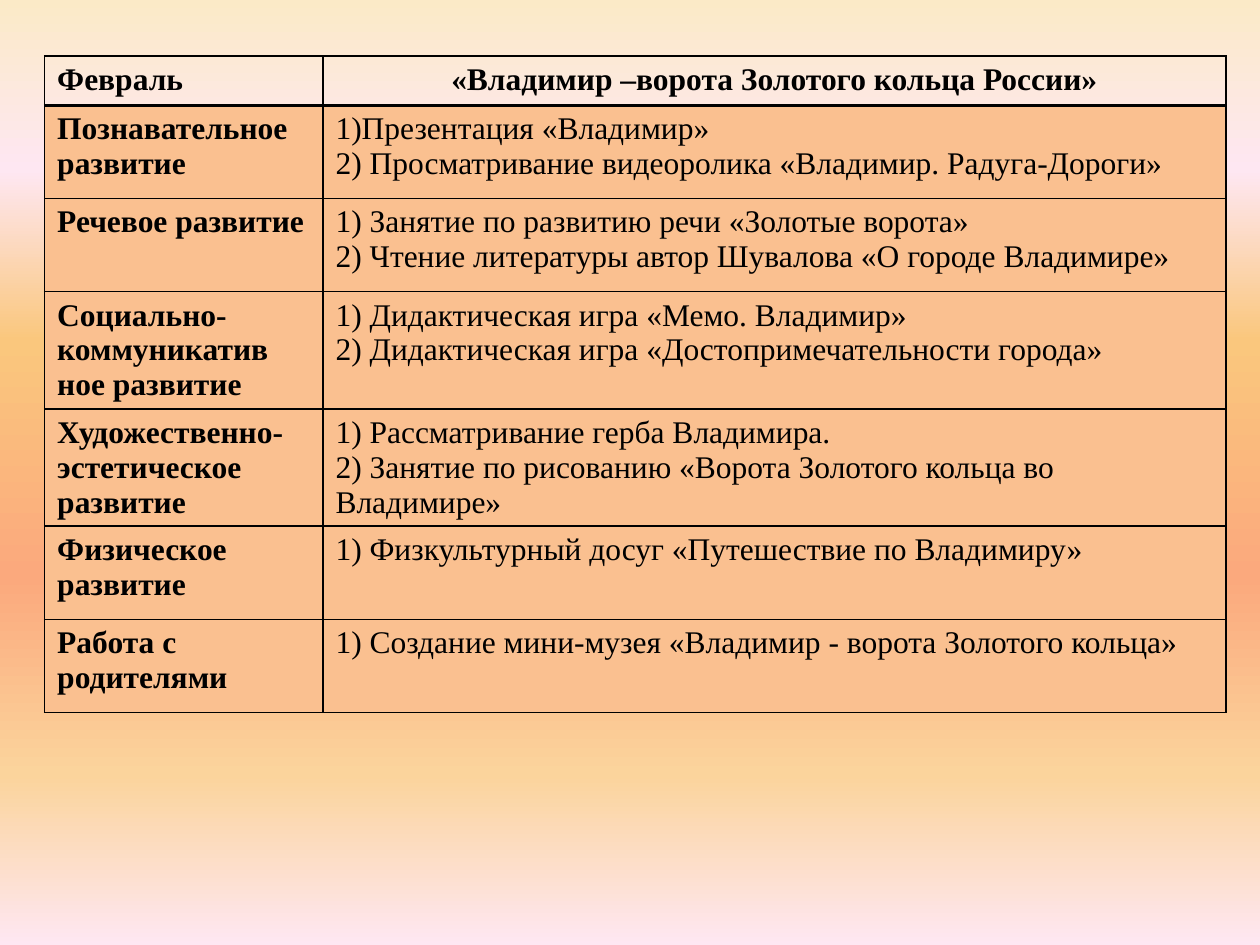
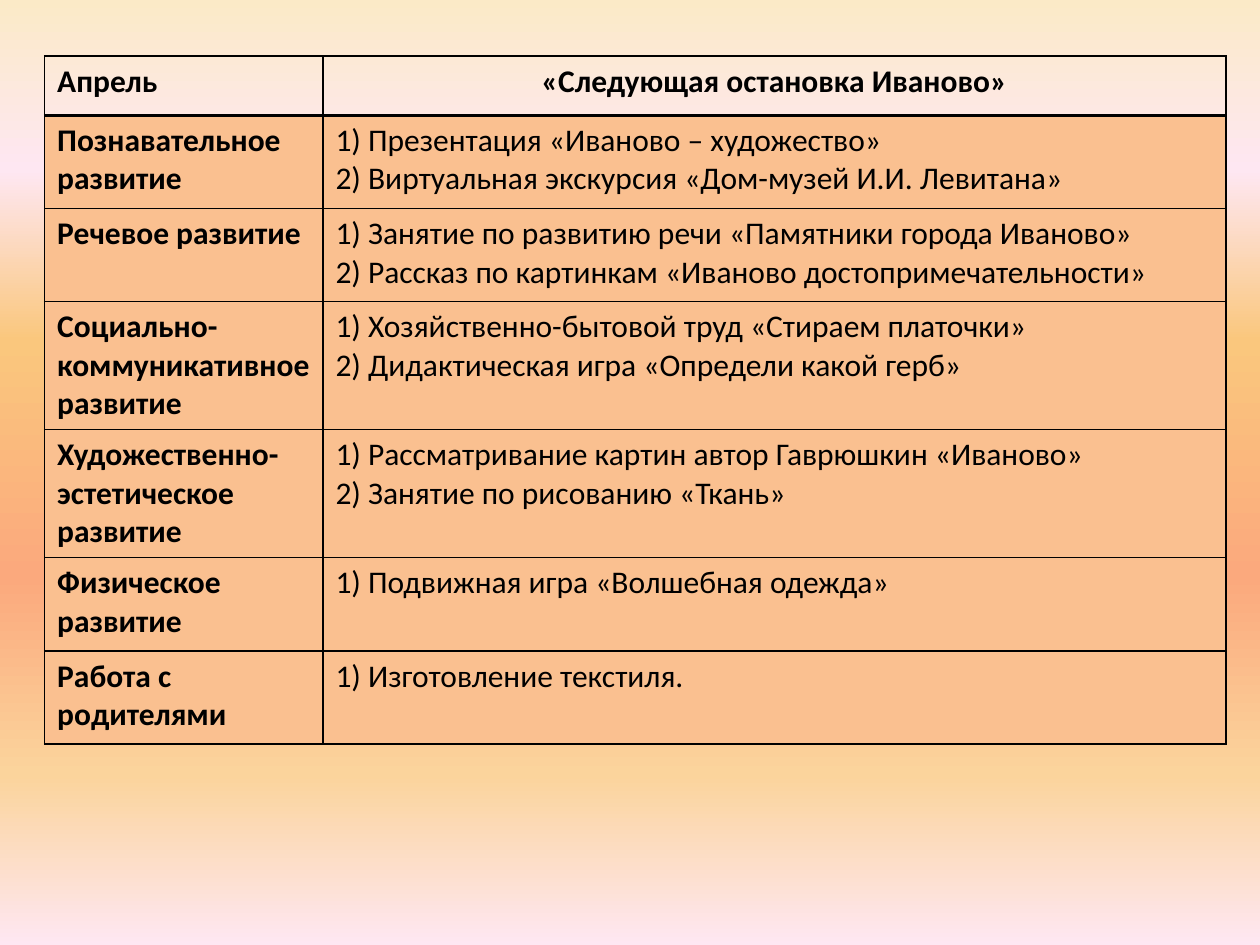
from dataclasses import dataclass

from lxml import etree
from pptx import Presentation
from pptx.dml.color import RGBColor
from pptx.enum.text import PP_ALIGN
from pptx.oxml import parse_xml
from pptx.oxml.ns import nsdecls, qn
from pptx.slide import Slide
from pptx.table import _Cell
from pptx.util import Cm, Pt

LEFT, CENTER = PP_ALIGN.LEFT, PP_ALIGN.CENTER

COLOURS = {
    "text": "000000",
    "border": "000000",
    "body": "FAC090",
    "cream": "FBEAC7",
    "pink": "FEE7F2",
    "gold": "FAC77D",
    "coral": "FBA97D",
    "sand": "FBD49C",
}
BACKGROUND_STOPS = [(0, "cream"), (18, "pink"), (36, "gold"),
                    (61, "coral"), (82, "sand"), (100, "pink")]

TABLE_LEFT, TABLE_TOP = Cm(0.9), Cm(1.13)
COLUMN_WIDTHS = [Cm(5.61), Cm(18.2)]
BODY_ROW_HEIGHT = Cm(1.88)
TEXT_SIZE = Pt(18)
THIN, THICK = Pt(1), Pt(2)

# Areas of development; a line break starts a new paragraph
COGNITIVE = "Познавательное развитие"
SPEECH = "Речевое развитие"
SOCIAL = "Социально-коммуникативное развитие"
SOCIAL_SPLIT = "Социально-коммуникатив\nное развитие"
ARTISTIC = "Художественно-эстетическое развитие"
PHYSICAL = "Физическое развитие"
PARENTS = "Работа с родителями"


@dataclass
class MonthPlan:
    month: str
    topic: str
    font_name: str
    header_height: Cm
    activities: dict[str, str]


PLANS = [
    MonthPlan("Февраль", "«Владимир –ворота Золотого кольца России»",
              "Times New Roman", Cm(0.99), {
        COGNITIVE: "1)Презентация «Владимир»\n"
                   "2) Просматривание видеоролика «Владимир. Радуга-Дороги»",
        SPEECH: "1) Занятие по развитию речи «Золотые ворота»\n"
                "2) Чтение литературы автор Шувалова «О городе Владимире»",
        SOCIAL_SPLIT: "1) Дидактическая игра «Мемо. Владимир»\n"
                      "2) Дидактическая игра «Достопримечательности города»",
        ARTISTIC: "1) Рассматривание герба Владимира.\n"
                  "2) Занятие по рисованию «Ворота Золотого кольца во Владимире»",
        PHYSICAL: "1) Физкультурный досуг «Путешествие по Владимиру»",
        PARENTS: "1) Создание мини-музея «Владимир - ворота Золотого кольца»",
    }),
    MonthPlan("Апрель", "«Следующая остановка Иваново»",
              "Calibri", Cm(1.19), {
        COGNITIVE: "1) Презентация «Иваново – художество»\n"
                   "2) Виртуальная экскурсия «Дом-музей И.И. Левитана»",
        SPEECH: "1) Занятие по развитию речи «Памятники города Иваново»\n"
                "2) Рассказ по картинкам «Иваново достопримечательности»",
        SOCIAL: "1) Хозяйственно-бытовой труд «Стираем платочки»\n"
                "2) Дидактическая игра «Определи какой герб»",
        ARTISTIC: "1) Рассматривание картин автор Гаврюшкин «Иваново»\n"
                  "2) Занятие по рисованию «Ткань»",
        PHYSICAL: "1) Подвижная игра «Волшебная одежда»",
        PARENTS: "1) Изготовление текстиля.",
    }),
]


def set_background(slide: Slide) -> None:
    """Fill the slide with the vertical gradient."""
    stops = "".join(
        f'<a:gs pos="{percent * 1000}"><a:srgbClr val="{COLOURS[name]}"/></a:gs>'
        for percent, name in BACKGROUND_STOPS)
    background = parse_xml(
        f'<p:bg {nsdecls("p", "a")}><p:bgPr><a:gradFill rotWithShape="1">'
        f'<a:gsLst>{stops}</a:gsLst><a:lin ang="5400000" scaled="0"/>'
        '</a:gradFill><a:effectLst/></p:bgPr></p:bg>')
    slide.element.find(qn("p:cSld")).insert(0, background)


def set_borders(cell: _Cell, top: Pt, bottom: Pt) -> None:
    """Draw all four borders, which come before the fill in the XML."""
    properties = cell._tc.get_or_add_tcPr()
    widths = {"lnL": THIN, "lnR": THIN, "lnT": top, "lnB": bottom}
    for index, (side, width) in enumerate(widths.items()):
        line = etree.Element(qn(f"a:{side}"), w=str(int(width)))
        fill = etree.SubElement(line, qn("a:solidFill"))
        etree.SubElement(fill, qn("a:srgbClr"), val=COLOURS["border"])
        properties.insert(index, line)


def write_cell(cell: _Cell, text: str, font_name: str, bold: bool,
               alignment: PP_ALIGN) -> None:
    cell.text = text
    for paragraph in cell.text_frame.paragraphs:
        paragraph.alignment = alignment
        paragraph.font.name = font_name
        paragraph.font.size = TEXT_SIZE
        paragraph.font.bold = bold
        paragraph.font.color.rgb = RGBColor.from_string(COLOURS["text"])


def add_plan_table(slide: Slide, plan: MonthPlan) -> None:
    rows = [(plan.month, plan.topic), *plan.activities.items()]
    heights = [plan.header_height] + [BODY_ROW_HEIGHT] * len(plan.activities)
    table = slide.shapes.add_table(
        len(rows), len(COLUMN_WIDTHS), TABLE_LEFT, TABLE_TOP,
        sum(COLUMN_WIDTHS), sum(heights)).table
    table.first_row = table.horz_banding = False
    for column, width in zip(table.columns, COLUMN_WIDTHS):
        column.width = width

    for row_index, texts in enumerate(rows):
        table.rows[row_index].height = heights[row_index]
        is_header = row_index == 0
        for column_index, text in enumerate(texts):
            cell = table.cell(row_index, column_index)
            is_label = column_index == 0
            write_cell(cell, text, plan.font_name, is_header or is_label,
                       CENTER if is_header and not is_label else LEFT)
            if is_header:
                cell.fill.background()
            else:
                cell.fill.solid()
                cell.fill.fore_color.rgb = RGBColor.from_string(COLOURS["body"])
            set_borders(cell, top=THICK if row_index == 1 else THIN,
                        bottom=THICK if is_header else THIN)


def main() -> None:
    presentation = Presentation()
    presentation.slide_width, presentation.slide_height = Cm(25.4), Cm(19.05)
    blank_layout = presentation.slide_layouts[6]
    for plan in PLANS:
        slide = presentation.slides.add_slide(blank_layout)
        set_background(slide)
        add_plan_table(slide, plan)
    presentation.save("out.pptx")


if __name__ == "__main__":
    main()
